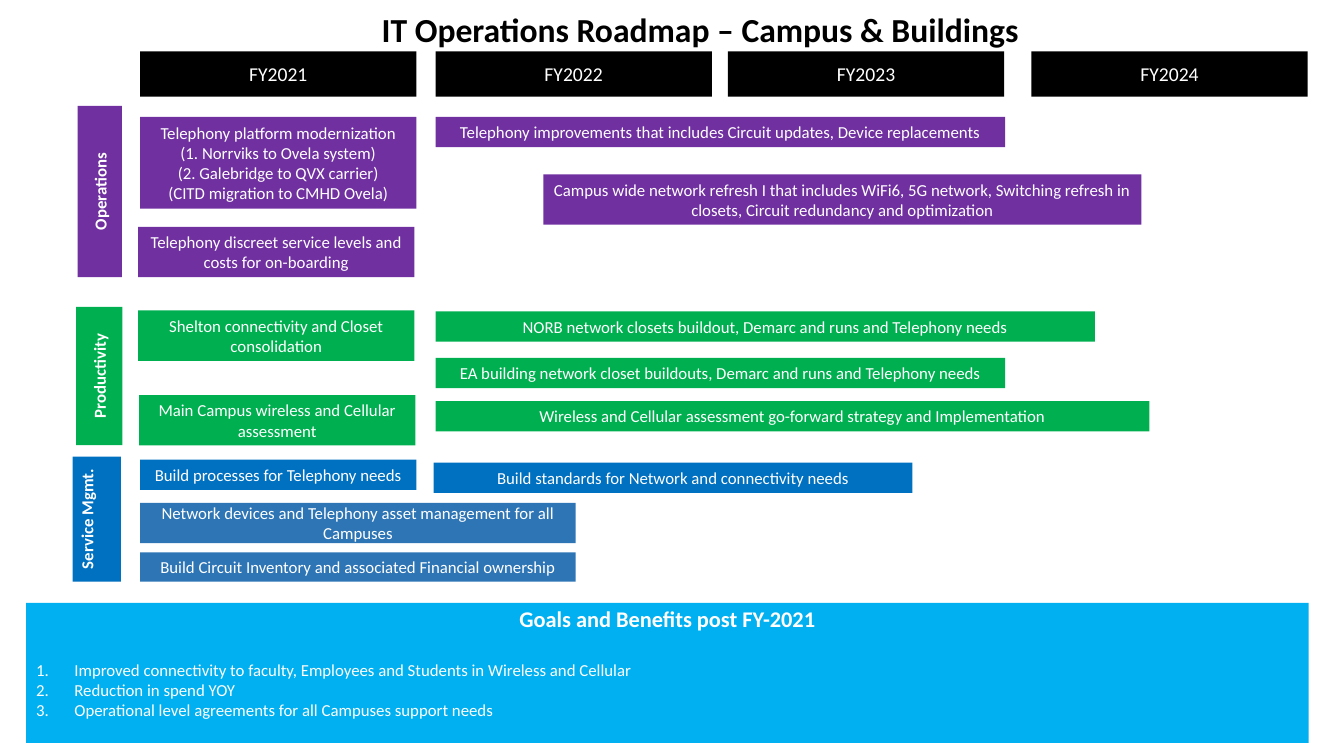
import pptx
import pptx.dml.color
import pptx.enum.shapes
import pptx.enum.text
import pptx.oxml.ns
import pptx.util
import lxml.etree

PX = 9144  # one hundredth of an inch
THEME = {
    "font": "Calibri", "white": "FFFFFF", "black": "000000",
    "purple": "7030A0", "green": "00B050", "blue": "0070C0",
    "steel": "2E75B6", "sky": "00B0F0",
    "title": 24, "goal": 16, "year": 14, "body": 12,
}
MIDDLE = pptx.enum.text.MSO_ANCHOR.MIDDLE
CENTER = pptx.enum.text.PP_ALIGN.CENTER
LEFT = pptx.enum.text.PP_ALIGN.LEFT


def write(para, text, size="body", bold=False, color="white", align=CENTER):
    para.alignment = align
    run = para.add_run()
    run.text = text
    form = {"name": THEME["font"], "size": pptx.util.Pt(THEME[size]), "bold": bold}
    for key, value in form.items():
        setattr(run.font, key, value)
    run.font.color.rgb = pptx.dml.color.RGBColor.from_string(THEME[color])


def block(spot, fill, text, size="body", bold=False):
    """Add a filled box, with one paragraph for each line of text."""
    shape = slide.shapes.add_shape(
        pptx.enum.shapes.MSO_SHAPE.RECTANGLE, *[n * PX for n in spot])
    shape.shadow.inherit = False
    shape.fill.solid()
    shape.fill.fore_color.rgb = pptx.dml.color.RGBColor.from_string(THEME[fill])
    shape.line.fill.background()
    frame = shape.text_frame
    form = {"word_wrap": True, "vertical_anchor": MIDDLE}
    for key, value in form.items():
        setattr(frame, key, value)
    for index, line in enumerate(text.split("\n")):
        para = frame.add_paragraph() if index else frame.paragraphs[0]
        write(para, line, size, bold)
    return shape


deck = pptx.Presentation()
deck.slide_width, deck.slide_height = 1333 * PX, 750 * PX
slide = deck.slides.add_slide(deck.slide_layouts[6])

# Title
title = slide.shapes.add_textbox(*[n * PX for n in (103, 4, 1183, 50)])
title.text_frame.word_wrap = True
write(title.text_frame.paragraphs[0], "IT Operations Roadmap – Campus & Buildings",
      "title", True, "black")

# Years
for year, left in enumerate((139, 432, 722, 1023), 2021):
    block((left, 51, 274, 45), "black", f"FY{year}", "year")

# Tracks: label, fill, left, top, width and height as seen
TRACKS = [
    ("Operations", "purple", 77, 105, 44, 170),
    ("Productivity", "green", 75, 305, 46, 137),
    ("Service Mgmt.", "blue", 72, 453, 48, 124),
]
for label, fill, left, top, wide, high in TRACKS:
    shift = (high - wide) // 2
    track = block((left - shift, top + shift, high, wide), fill, label, bold=True)
    track.rotation = 270
track.text_frame.margin_bottom = 25 * PX  # last label sits off centre

# Projects by fill: left, top, width, height, text
WORK = {
    "purple": [
        (139, 116, 274, 91, "Telephony platform modernization (1. Norrviks to Ovela system)\n"
         "(2. Galebridge to QVX carrier)\n(CITD migration to CMHD Ovela)"),
        (137, 225, 274, 50, "Telephony discreet service levels and costs for on-boarding"),
        (432, 116, 565, 30,
         "Telephony improvements that includes Circuit updates, Device replacements"),
        (539, 173, 593, 50, "Campus wide network refresh I that includes WiFi6, 5G network, "
         "Switching refresh in closets, Circuit redundancy and optimization"),
    ],
    "green": [
        (137, 308, 274, 50, "Shelton connectivity and Closet consolidation"),
        (138, 392, 274, 50, "Main Campus wireless and Cellular assessment"),
        (432, 309, 654, 30, "NORB network closets buildout, Demarc and runs and Telephony needs"),
        (432, 355, 565, 30,
         "EA building network closet buildouts, Demarc and runs and Telephony needs"),
        (432, 398, 708, 30,
         "Wireless and Cellular assessment go-forward strategy and Implementation"),
    ],
    "blue": [
        (139, 456, 274, 30, "Build processes for Telephony needs"),
        (430, 459, 475, 30, "Build standards for Network and connectivity needs"),
    ],
    "steel": [
        (139, 499, 432, 40, "Network devices and Telephony asset management for all Campuses"),
        (139, 548, 432, 29, "Build Circuit Inventory and associated Financial ownership"),
    ],
}
for fill, jobs in WORK.items():
    for *spot, text in jobs:
        block(spot, fill, text)

# Goals
goals = block((26, 598, 1272, 139), "sky", "Goals and Benefits post FY-2021", "goal", True)
frame = goals.text_frame
frame.margin_bottom = 25 * PX
frame.paragraphs[0].space_after = pptx.util.Pt(19.5)
GAINS = [
    "Improved connectivity to faculty, Employees and Students in Wireless and Cellular",
    "Reduction in spend YOY",
    "Operational level agreements for all Campuses support needs",
]
for gain in GAINS:
    para = frame.add_paragraph()
    write(para, gain, align=LEFT)
    props = para._p.get_or_add_pPr()
    for key, value in {"marL": 38 * PX, "indent": -38 * PX}.items():
        props.set(key, str(value))
    lxml.etree.SubElement(props, pptx.oxml.ns.qn("a:buAutoNum"), type="arabicPeriod")

deck.save("out.pptx")
